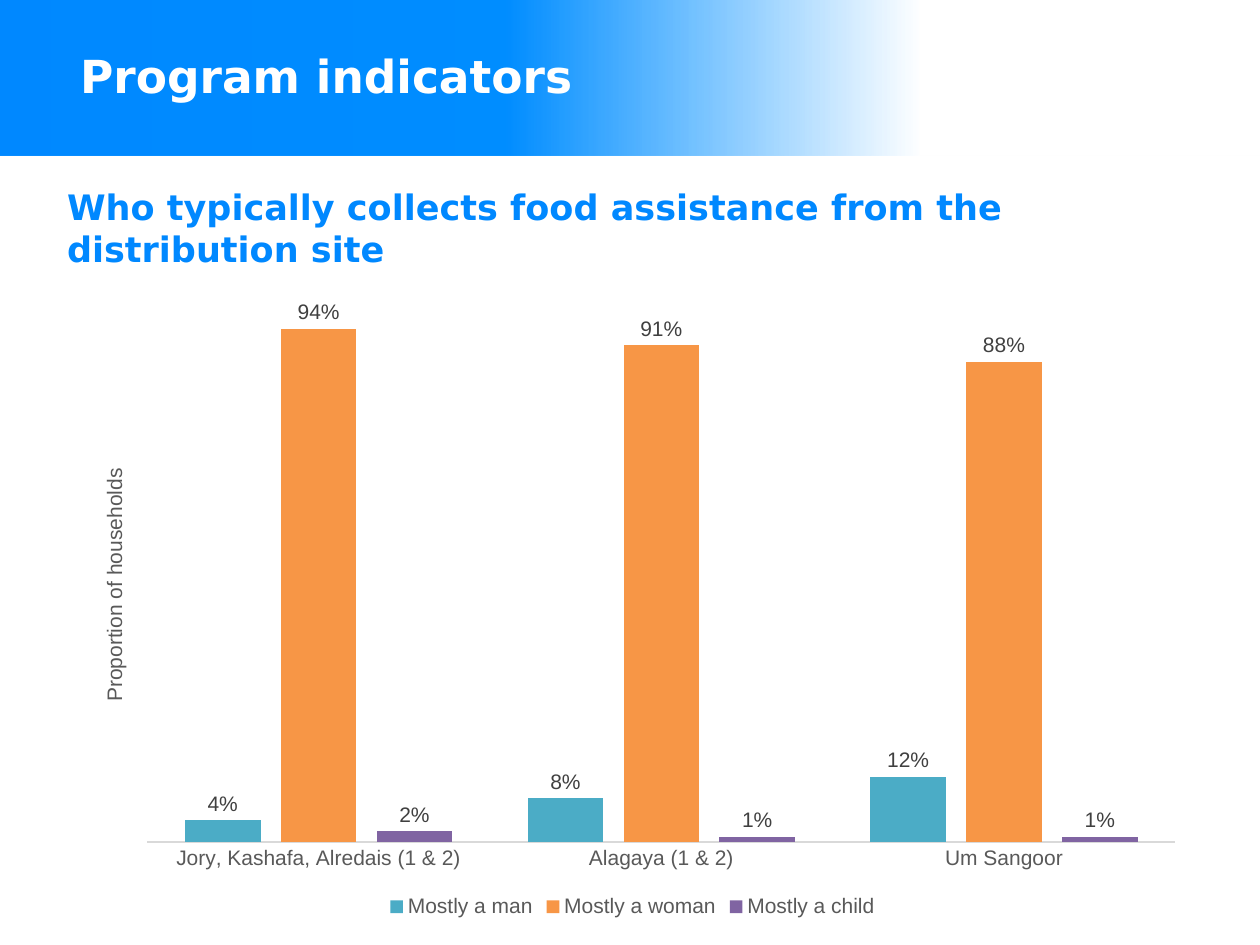
import pptx
import pptx.chart.data
import pptx.dml.color
import pptx.enum.chart
import pptx.enum.shapes
import pptx.enum.text
import pptx.oxml
import pptx.oxml.ns
import pptx.util
from lxml import etree

PX = 914400 / 126
COLORS = {
    "blue": "0088FF", "mid_blue": "008DFF", "light_blue": "0091FF", "white": "FFFFFF",
    "man": "4BACC6", "woman": "F79646", "child": "8064A2",
    "label": "404040", "axis_text": "595959", "axis_line": "D9D9D9",
}
HEADING_FONT, CHART_FONT = "DejaVu Sans", "Arial"
QUESTION = "Who typically collects food assistance from the distribution site"
SITES = ["Jory, Kashafa, Alredais (1 & 2)", "Alagaya (1 & 2)", "Um Sangoor"]
COLLECTORS = [
    ("Mostly a man", "man", (0.04, 0.08, 0.12)),
    ("Mostly a woman", "woman", (0.94, 0.91, 0.88)),
    ("Mostly a child", "child", (0.02, 0.01, 0.01)),
]
qn = pptx.oxml.ns.qn


def px(*lengths):
    return [pptx.util.Emu(round(n * PX)) for n in lengths]


def rgb(name):
    return pptx.dml.color.RGBColor.from_string(COLORS[name])


def style_font(font, name, size, color, bold=False):
    font.name, font.size, font.bold = name, pptx.util.Pt(size), bold
    font.color.rgb = rgb(color)


def place_heading(sp, box, text, size, color, insets, anchor):
    """Move a placeholder to box and set its single bold, left-aligned line."""
    sp.left, sp.top, sp.width, sp.height = px(*box)
    tf = sp.text_frame
    tf.text = text
    tf.word_wrap = True
    tf.auto_size = pptx.enum.text.MSO_AUTO_SIZE.NONE
    tf.vertical_anchor = anchor
    tf.margin_left, tf.margin_top, tf.margin_right, tf.margin_bottom = px(*insets)
    p = tf.paragraphs[0]
    p.alignment = pptx.enum.text.PP_ALIGN.LEFT
    p.space_before = pptx.util.Pt(0)
    p_pr = p._p.get_or_add_pPr()
    p_pr.set("marL", "0")
    p_pr.set("indent", "0")
    etree.SubElement(p_pr, qn("a:buNone"))
    style_font(p.runs[0].font, HEADING_FONT, size, color, bold=True)


def add_banner(s, box):
    """Add a band behind the title that fades out to the right."""
    sp = s.shapes.add_shape(pptx.enum.shapes.MSO_SHAPE.RECTANGLE, *px(*box))
    sp.shadow.inherit = False
    sp.line.fill.background()
    sp.fill.gradient()
    sp.fill.gradient_angle = 0
    stops = sp._element.spPr.find(".//" + qn("a:gsLst"))
    for stop in list(stops):
        stops.remove(stop)
    for percent, color, alpha in ((0, "blue", 100), (40, "mid_blue", 100), (73, "light_blue", 0)):
        stop = etree.SubElement(stops, qn("a:gs"), pos=str(percent * 1000))
        clr = etree.SubElement(stop, qn("a:srgbClr"), val=COLORS[color])
        etree.SubElement(clr, qn("a:alpha"), val=str(alpha * 1000))
    s.shapes._spTree.insert(2, sp._element)


def set_layout(parent, index, **fractions):
    """Give a chart part a fixed place, in fractions of the chart."""
    old = parent.find(qn("c:layout"))
    if old is not None:
        parent.remove(old)
    layout = etree.Element(qn("c:layout"))
    manual = etree.SubElement(layout, qn("c:manualLayout"))
    if "w" in fractions:
        etree.SubElement(manual, qn("c:layoutTarget"), val="inner")
    for key in ("x", "y"):
        etree.SubElement(manual, qn(f"c:{key}Mode"), val="edge")
    for key, value in fractions.items():
        etree.SubElement(manual, qn(f"c:{key}"), val=f"{value:.3f}")
    parent.insert(index, layout)


def format_axes(chart):
    sites = chart.category_axis
    sites.major_tick_mark = pptx.enum.chart.XL_TICK_MARK.NONE
    sites.format.line.color.rgb = rgb("axis_line")
    sites.format.line.width = pptx.util.Pt(0.75)
    style_font(sites.tick_labels.font, CHART_FONT, 12, "axis_text")

    share = chart.value_axis
    share.visible = False
    share.has_major_gridlines = False
    share.minimum_scale, share.maximum_scale, share.major_unit = 0, 1, 0.25
    share.tick_labels.number_format = "0%"
    share.tick_labels.number_format_is_linked = False
    tf = share.axis_title.text_frame
    tf.text = "Proportion of households"
    tf._txBody.bodyPr.set("rot", "-5400000")
    tf._txBody.bodyPr.set("vert", "horz")
    style_font(tf.paragraphs[0].runs[0].font, CHART_FONT, 12, "axis_text")


def add_collector_chart(s, box):
    data = pptx.chart.data.CategoryChartData(number_format="0%")
    data.categories = SITES
    for name, _, values in COLLECTORS:
        data.add_series(name, values)
    kind = pptx.enum.chart.XL_CHART_TYPE.COLUMN_CLUSTERED
    chart = s.shapes.add_chart(kind, *px(*box), data).chart
    chart.has_title = False
    chart.font.name, chart.font.size = CHART_FONT, pptx.util.Pt(12)
    format_axes(chart)

    plot = chart.plots[0]
    plot.gap_width, plot.overlap, plot.vary_by_categories = 100, -27, False
    for series, (_, color, _) in zip(plot.series, COLLECTORS):
        series.format.fill.solid()
        series.format.fill.fore_color.rgb = rgb(color)
        labels = series.data_labels
        labels.show_value = True
        labels.number_format, labels.number_format_is_linked = "0%", False
        labels.position = pptx.enum.chart.XL_LABEL_POSITION.OUTSIDE_END
        style_font(labels.font, CHART_FONT, 12, "label")

    chart.has_legend = True
    chart.legend.position = pptx.enum.chart.XL_LEGEND_POSITION.BOTTOM
    chart.legend.include_in_layout = False
    style_font(chart.legend.font, CHART_FONT, 12, "axis_text")

    _, _, width, height = box
    plot_area = chart._chartSpace.find(".//" + qn("c:plotArea"))
    set_layout(plot_area, 0, x=80 / width, y=14 / height, w=1028 / width, h=546 / height)
    set_layout(chart.value_axis.axis_title._element, 1, x=30 / width, y=183 / height)


def main():
    prs = pptx.Presentation()
    prs.slide_width, prs.slide_height = px(1260, 945)
    s = prs.slides.add_slide(prs.slide_layouts[1])
    anchor = pptx.enum.text.MSO_ANCHOR
    add_banner(s, (0, 0, 1260, 155))
    place_heading(s.shapes.title, (67, 16, 816, 127), "Program indicators",
                  26, "white", (13, 0, 13, 9), anchor.MIDDLE)
    place_heading(s.placeholders[1], (67, 185, 1131, 58), QUESTION,
                  20, "blue", (0, 0, 0, 0), anchor.TOP)
    add_collector_chart(s, (67, 282, 1131, 641))
    prs.save("out.pptx")


if __name__ == "__main__":
    main()
